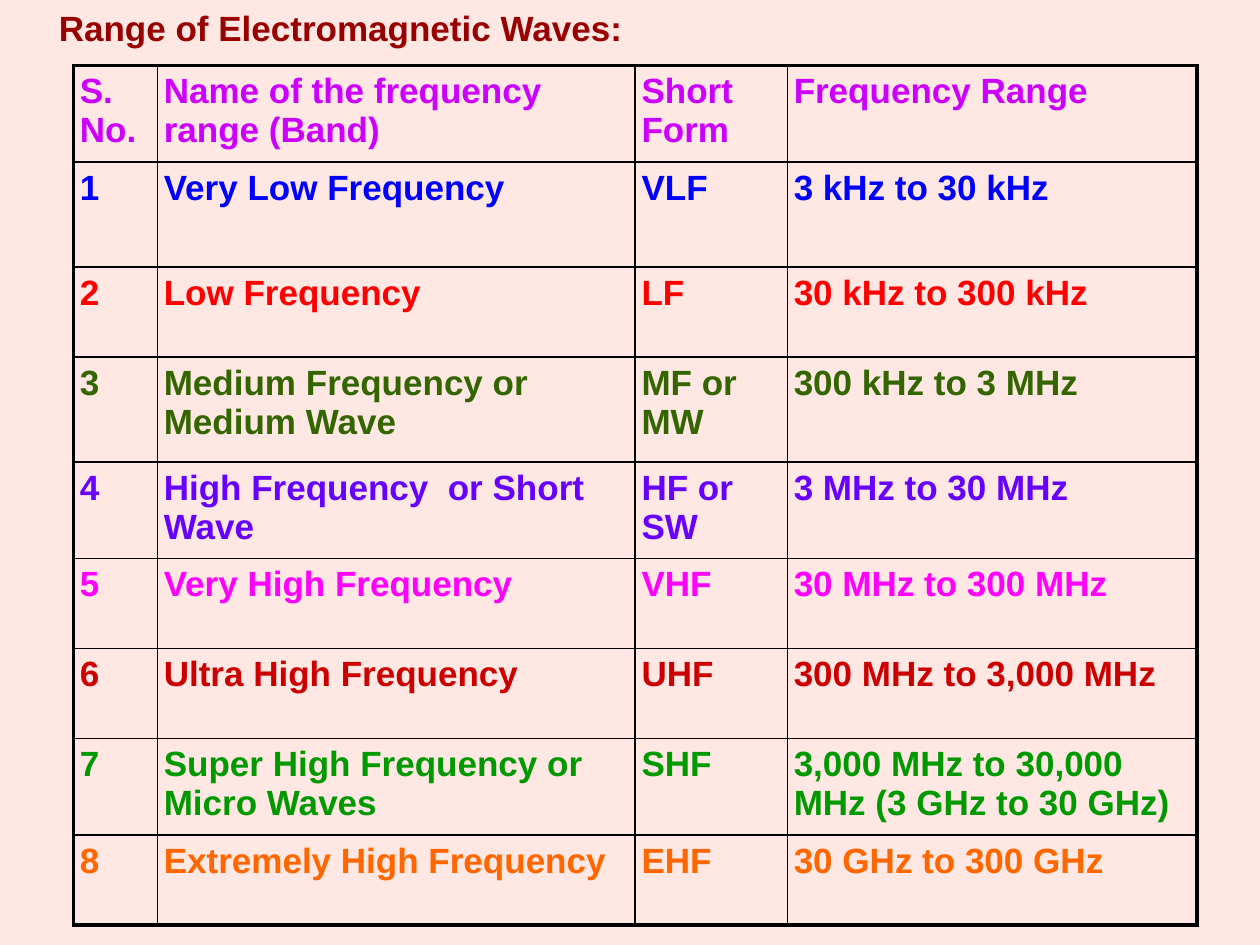
from dataclasses import dataclass

from lxml.etree import SubElement
from pptx import Presentation
from pptx.dml.color import RGBColor as Rgb
from pptx.enum.text import MSO_ANCHOR as Anchor, MSO_AUTO_SIZE as AutoSize, PP_ALIGN as Align
from pptx.oxml.ns import qn
from pptx.util import Pt


@dataclass(frozen=True)
class Theme:
    font: str = "Arial"
    size: float = 20
    inset: float = 3.6
    background: str = "FFE7E3"
    title: str = "990000"
    border: str = "000000"
    outer_line: float = 2.25
    inner_line: float = 1
    rows: tuple = ("CC00FF", "0000FF", "FF0000", "336600", "6600FF",
                   "FF00FF", "CC0000", "009900", "FF6600")


BANDS = [
    ("S. No.", "Name of the frequency range (Band)", "Short Form", "Frequency Range"),
    ("1", "Very Low Frequency", "VLF", "3 kHz to 30 kHz"),
    ("2", "Low Frequency", "LF", "30 kHz to 300 kHz"),
    ("3", "Medium Frequency or Medium Wave", "MF or MW", "300 kHz to 3 MHz"),
    ("4", "High Frequency  or Short Wave", "HF or SW", "3 MHz to 30 MHz"),
    ("5", "Very High Frequency", "VHF", "30 MHz to 300 MHz"),
    ("6", "Ultra High Frequency", "UHF", "300 MHz to 3,000 MHz"),
    ("7", "Super High Frequency or Micro Waves", "SHF",
     "3,000 MHz to 30,000 MHz (3 GHz to 30 GHz)"),
    ("8", "Extremely High Frequency", "EHF", "30 GHz to 300 GHz"),
]
COLUMN_WIDTHS = (48, 273, 87, 234)
ROW_HEIGHTS = (55.2, 60, 51.4, 60, 55.2, 51.4, 51.4, 55.2, 51.4)


class SlideBuilder:
    def __init__(self, slide, theme):
        self.slide = slide
        self.theme = theme

    def background(self):
        fill = self.slide.background.fill
        fill.solid()
        fill.fore_color.rgb = Rgb.from_string(self.theme.background)

    def set_insets(self, holder):
        holder.margin_left = holder.margin_right = Pt(self.theme.inset)
        holder.margin_top = holder.margin_bottom = Pt(self.theme.inset)
        holder.vertical_anchor = Anchor.TOP

    def add_text(self, paragraph, text, color):
        paragraph.alignment = Align.LEFT
        run = paragraph.add_run()
        run.text = text
        run.font.name = self.theme.font
        run.font.size = Pt(self.theme.size)
        run.font.bold = True
        run.font.color.rgb = Rgb.from_string(color)

    def title(self, text, left, top, width, height):
        heading = self.slide.shapes.title
        heading.left, heading.top = Pt(left), Pt(top)
        heading.width, heading.height = Pt(width), Pt(height)
        frame = heading.text_frame
        frame.word_wrap = True
        frame.auto_size = AutoSize.NONE
        self.set_insets(frame)
        self.add_text(frame.paragraphs[0], text, self.theme.title)

    def border(self, cell, side, outer):
        weight = self.theme.outer_line if outer else self.theme.inner_line
        properties = cell._tc.get_or_add_tcPr()
        line = SubElement(properties, qn(f"a:ln{side}"), w=str(Pt(weight)))
        fill = SubElement(line, qn("a:solidFill"))
        SubElement(fill, qn("a:srgbClr"), val=self.theme.border)

    def table(self, records, left, top, widths, heights):
        grid = self.slide.shapes.add_table(
            len(records), len(widths), Pt(left), Pt(top),
            Pt(sum(widths)), Pt(sum(heights))).table
        grid.first_row = grid.horz_banding = False
        for column, width in zip(grid.columns, widths):
            column.width = Pt(width)
        for row, height in zip(grid.rows, heights):
            row.height = Pt(height)
        last_row, last_column = len(records) - 1, len(widths) - 1
        for r, (record, color) in enumerate(zip(records, self.theme.rows)):
            for c, text in enumerate(record):
                cell = grid.cell(r, c)
                self.set_insets(cell)
                self.border(cell, "L", c == 0)
                self.border(cell, "R", c == last_column)
                self.border(cell, "T", r == 0)
                self.border(cell, "B", r == last_row)
                cell.fill.background()
                self.add_text(cell.text_frame.paragraphs[0], text, color)


def main():
    deck = Presentation()
    deck.slide_width, deck.slide_height = Pt(720), Pt(540)
    title_only = deck.slide_layouts[5]
    builder = SlideBuilder(deck.slides.add_slide(title_only), Theme())
    builder.background()
    builder.table(BANDS, 42, 37.5, COLUMN_WIDTHS, ROW_HEIGHTS)
    builder.title("Range of Electromagnetic Waves:", 30, 0, 342, 30)
    deck.save("out.pptx")


if __name__ == "__main__":
    main()
